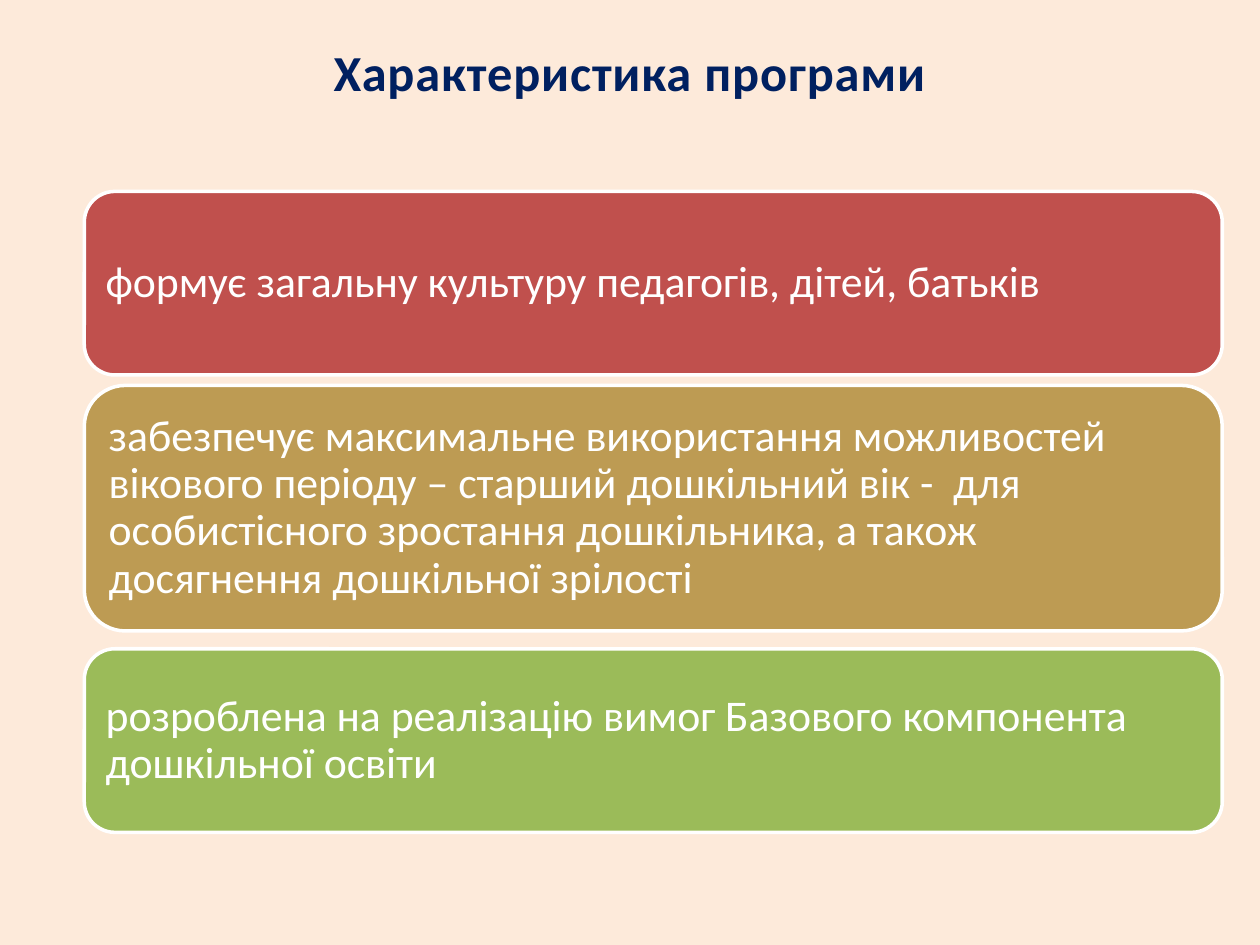
from dataclasses import dataclass

from pptx import Presentation
from pptx.dml.color import RGBColor
from pptx.enum.shapes import MSO_SHAPE
from pptx.enum.text import MSO_ANCHOR, PP_ALIGN
from pptx.util import Cm, Pt


@dataclass(frozen=True)
class Theme:
    font: str = "Calibri"
    background: RGBColor = RGBColor(0xFD, 0xEA, 0xDA)
    heading: RGBColor = RGBColor(0x00, 0x20, 0x60)
    white: RGBColor = RGBColor(0xFF, 0xFF, 0xFF)
    red: RGBColor = RGBColor(0xC0, 0x50, 0x4D)
    ochre: RGBColor = RGBColor(0xBD, 0x9B, 0x53)
    green: RGBColor = RGBColor(0x9B, 0xBB, 0x59)
    heading_size: Pt = Pt(28.8)
    body_size: Pt = Pt(25)


theme = Theme()


def write(frame, text, size, color, align):
    frame.word_wrap = True
    frame.vertical_anchor = MSO_ANCHOR.MIDDLE
    paragraph = frame.paragraphs[0]
    paragraph.alignment = align
    run = paragraph.add_run()
    run.text = text
    run.font.name = theme.font
    run.font.size = size
    run.font.color.rgb = color
    return paragraph, run


presentation = Presentation()
presentation.slide_width, presentation.slide_height = Cm(25.4), Cm(19.05)
slide = presentation.slides.add_slide(presentation.slide_layouts[6])
slide.background.fill.solid()
slide.background.fill.fore_color.rgb = theme.background

# Heading
heading = slide.shapes.add_textbox(Cm(1.75), Cm(0.69), Cm(21.9), Cm(1.5))
_, heading_run = write(heading.text_frame, "Характеристика програми",
                       theme.heading_size, theme.heading, PP_ALIGN.CENTER)
heading_run.font.bold = True
heading_run._r.get_or_add_rPr().set("spc", "50")

# Programme features: top and height in cm, colour, text
features = [
    (3.86, 3.7, theme.red, "формує загальну культуру педагогів, дітей, батьків"),
    (7.77, 4.95, theme.ochre,
     "забезпечує максимальне використання можливостей вікового періоду – "
     "старший дошкільний вік -  для особистісного зростання дошкільника, "
     "а також досягнення дошкільної зрілості"),
    (13.08, 3.7, theme.green,
     "розроблена на реалізацію вимог Базового компонента дошкільної освіти"),
]
for top, height, color, text in features:
    feature = slide.shapes.add_shape(MSO_SHAPE.ROUNDED_RECTANGLE,
                                     Cm(1.7), Cm(top), Cm(22.94), Cm(height))
    feature.shadow.inherit = False
    feature.fill.solid()
    feature.fill.fore_color.rgb = color
    feature.line.color.rgb = theme.white
    feature.line.width = Pt(2)
    frame = feature.text_frame
    frame.margin_left = frame.margin_right = Cm(0.25)
    frame.margin_top = frame.margin_bottom = Cm(0.25)
    paragraph, _ = write(frame, text, theme.body_size, theme.white, PP_ALIGN.LEFT)
    paragraph.line_spacing = 0.9

presentation.save("out.pptx")
